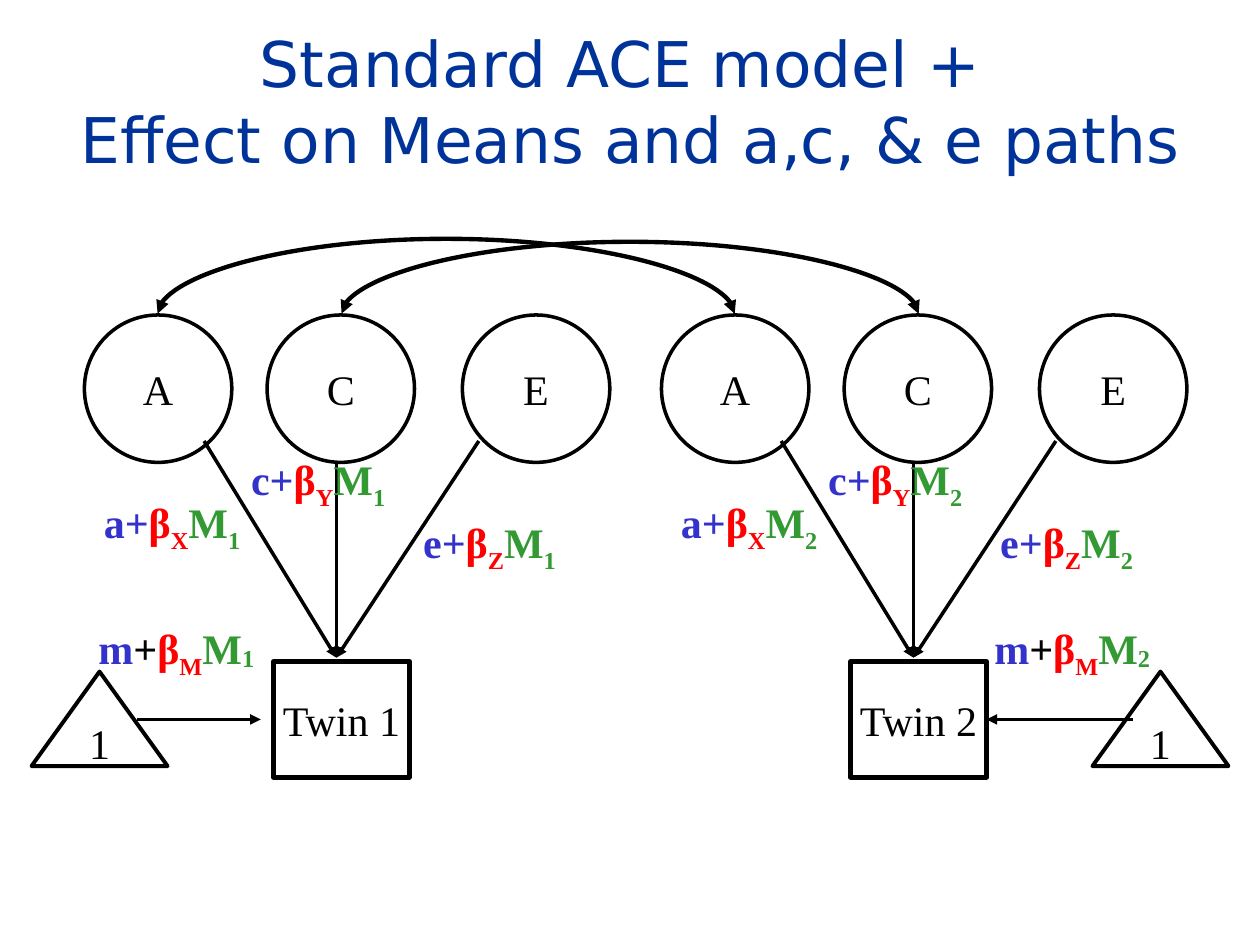
from typing import NamedTuple

from lxml import etree
from pptx import Presentation
from pptx.dml.color import RGBColor
from pptx.enum import shapes, text
from pptx.oxml.ns import qn
from pptx.util import Inches, Pt

COLORS = {"title": "003399", "black": "000000", "white": "FFFFFF",
          "path": "3333CC", "beta": "FF0000", "moderator": "339933"}
SERIF = "Times New Roman"
TWIN_OFFSET = 4.58
CIRCLE_SIZE = 1.17


class Factor(NamedTuple):
    letter: str
    left: float
    arrow_x: float
    arrow_y: float
    label_left: float
    label_top: float
    beta: str


class Mean(NamedTuple):
    triangle_left: float
    label_left: float
    arrow_start: float
    arrow_end: float


class Arc(NamedTuple):
    start: float
    bend: int


class Piece(NamedTuple):
    text: str
    color: str
    baseline: int = 0


FACTORS = [
    Factor("A", 0.67, 1.62, 3.5, 0.67, 3.92, "X"),
    Factor("C", 2.12, 2.67, 3.67, 1.83, 3.58, "Y"),
    Factor("E", 3.67, 3.8, 3.5, 3.19, 4.08, "Z"),
]
MEANS = [Mean(0.25, 0.58, 1.09, 2.07), Mean(8.67, 7.69, 8.99, 7.83)]
ARCS = [Arc(1.25, -377), Arc(2.71, -362)]


def rgb(name: str) -> RGBColor:
    return RGBColor.from_string(COLORS[name])


def style_paragraph(paragraph, size: float, font: str, bold: bool = False) -> None:
    paragraph.alignment = text.PP_ALIGN.CENTER
    paragraph.font.size = Pt(size)
    paragraph.font.name = font
    paragraph.font.bold = bold


def add_node(slide, kind, left: float, top: float, width: float,
             height: float, caption: str, line_width: float):
    shape = slide.shapes.add_shape(
        kind, Inches(left), Inches(top), Inches(width), Inches(height))
    shape.shadow.inherit = False
    shape.fill.solid()
    shape.fill.fore_color.rgb = rgb("white")
    shape.line.color.rgb = rgb("black")
    shape.line.width = Pt(line_width)
    frame = shape.text_frame
    frame.word_wrap = False
    frame.vertical_anchor = text.MSO_ANCHOR.MIDDLE
    frame.text = caption
    paragraph = frame.paragraphs[0]
    style_paragraph(paragraph, 24, SERIF)
    paragraph.font.color.rgb = rgb("black")
    return shape


def add_text_box(slide, left: float, top: float, width: float, height: float):
    box = slide.shapes.add_textbox(
        Inches(left), Inches(top), Inches(width), Inches(height))
    box.text_frame.word_wrap = True
    box.text_frame.vertical_anchor = text.MSO_ANCHOR.MIDDLE
    return box.text_frame.paragraphs[0]


def add_label(slide, left: float, top: float, width: float,
              pieces: list[Piece]) -> None:
    paragraph = add_text_box(slide, left, top, width, 0.5)
    style_paragraph(paragraph, 24, SERIF, bold=True)
    for piece in pieces:
        run = paragraph.add_run()
        run.text = piece.text
        run.font.color.rgb = rgb(piece.color)
        if piece.baseline:
            run._r.get_or_add_rPr().set("baseline", str(piece.baseline * 1000))


def moderated(beta: str, twin: int, drop: int = -25) -> list[Piece]:
    return [Piece("β", "beta"), Piece(beta, "beta", -25),
            Piece("M", "moderator"), Piece(str(twin), "moderator", drop)]


def add_arrow(slide, kind, start: tuple[float, float], end: tuple[float, float],
              line_width: float, ends: tuple[str, ...] = ("tailEnd",)):
    connector = slide.shapes.add_connector(
        kind, *(Inches(value) for value in start + end))
    connector.line.color.rgb = rgb("black")
    connector.line.width = Pt(line_width)
    line = connector.line._get_or_add_ln()
    for name in ends:
        etree.SubElement(line, qn(f"a:{name}"), type="triangle")
    etree.SubElement(connector._element.spPr, qn("a:effectLst"))
    return connector


def add_arc(slide, arc: Arc) -> None:
    middle = arc.start + TWIN_OFFSET / 2
    top = 2.49 - TWIN_OFFSET / 2
    connector = add_arrow(
        slide, shapes.MSO_CONNECTOR.CURVE, (middle, top),
        (middle, top + TWIN_OFFSET), 2.5, ("headEnd", "tailEnd"))
    connector.width = Pt(0.125)
    properties = connector._element.spPr
    transform = properties.find(qn("a:xfrm"))
    transform.set("rot", "5400000")
    transform.set("flipV", "1")
    adjustments = properties.find(qn("a:prstGeom")).find(qn("a:avLst"))
    etree.SubElement(adjustments, qn("a:gd"), name="adj1",
                     fmla=f"val {arc.bend * 100000}")


def add_twin(slide, twin: int, mean: Mean) -> None:
    offset = (twin - 1) * TWIN_OFFSET
    straight = shapes.MSO_CONNECTOR.STRAIGHT
    for factor in FACTORS:
        add_node(slide, shapes.MSO_SHAPE.OVAL, factor.left + offset, 2.5,
                 CIRCLE_SIZE, CIRCLE_SIZE, factor.letter, 2)
    for factor in FACTORS:
        add_arrow(slide, straight, (factor.arrow_x + offset, factor.arrow_y),
                  (2.67 + offset, 5.22), 2)
    for factor in FACTORS:
        add_label(slide, factor.label_left + offset, factor.label_top, 1.39,
                  [Piece(f"{factor.letter.lower()}+", "path"),
                   *moderated(factor.beta, twin)])
    box = add_node(slide, shapes.MSO_SHAPE.RECTANGLE, 2.17 + offset, 5.25,
                   1.08, 0.92, f"Twin {twin}", 2.5)
    add_node(slide, shapes.MSO_SHAPE.ISOSCELES_TRIANGLE, mean.triangle_left,
             5.33, 1.08, 0.75, "1", 2.25)
    arrow = add_arrow(slide, straight, (mean.arrow_start, 5.71),
                      (mean.arrow_end, 5.71), 2)
    if twin == 2:
        arrow.end_connect(box, 3)
    add_label(slide, mean.label_left, 4.92, 1.64,
              [Piece("m", "path"), Piece("+", "black"),
               *moderated("M", twin, -6)])


def main() -> None:
    presentation = Presentation()
    presentation.slide_width = Inches(10)
    presentation.slide_height = Inches(7.5)
    slide = presentation.slides.add_slide(presentation.slide_layouts[6])

    title = add_text_box(slide, 0.42, 0.17, 9.17, 1.25)
    title.text = "Standard ACE model + \vEffect on Means and a,c, & e paths"
    style_paragraph(title, 36, "DejaVu Sans")
    title.font.color.rgb = rgb("title")

    for twin, mean in enumerate(MEANS, start=1):
        add_twin(slide, twin, mean)
    for arc in ARCS:
        add_arc(slide, arc)
    presentation.save("out.pptx")


if __name__ == "__main__":
    main()
